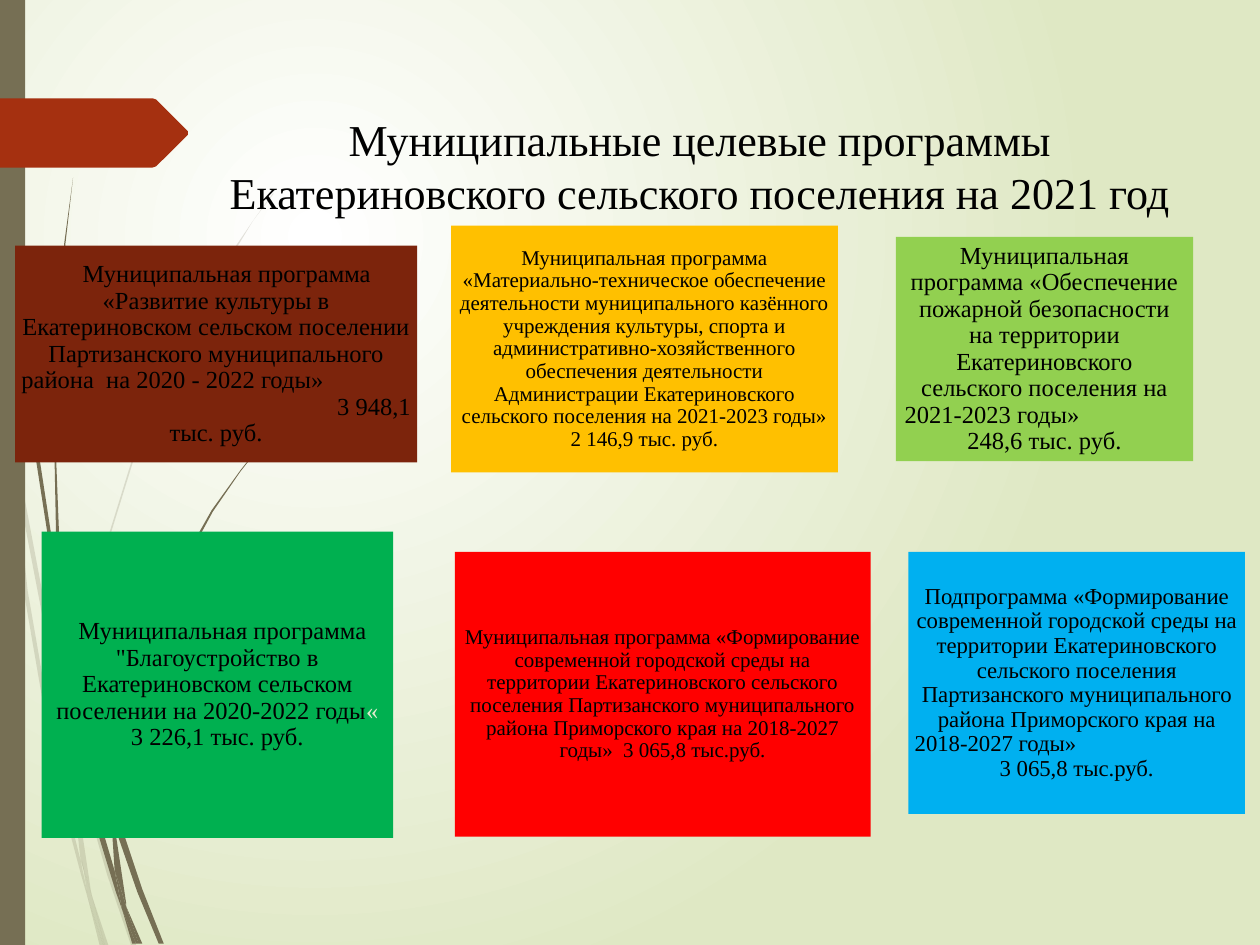
"""Builds the slide on municipal target programmes for 2021."""
from lxml import etree
from pptx import Presentation
from pptx.dml.color import RGBColor
from pptx.enum.shapes import MSO_SHAPE
from pptx.enum.text import MSO_ANCHOR, PP_ALIGN
from pptx.oxml.ns import qn
from pptx.util import Inches, Pt

RECTANGLE = MSO_SHAPE.RECTANGLE
TOP, MIDDLE = MSO_ANCHOR.TOP, MSO_ANCHOR.MIDDLE
LEFT, CENTER, RIGHT = PP_ALIGN.LEFT, PP_ALIGN.CENTER, PP_ALIGN.RIGHT

FONT = "Times New Roman"
BLACK = RGBColor(0x00, 0x00, 0x00)
WHITE = RGBColor(0xFF, 0xFF, 0xFF)
PALE_GREEN = RGBColor(0xDF, 0xE8, 0xC4)
PALE_QUOTE = RGBColor(0xE3, 0xEA, 0xCF)
OLIVE = RGBColor(0x76, 0x6F, 0x54)
RUST = RGBColor(0xA5, 0x30, 0x10)
BROWN = RGBColor(0x7C, 0x24, 0x0C)
AMBER = RGBColor(0xFF, 0xC0, 0x00)
LIME = RGBColor(0x92, 0xD0, 0x50)
GREEN = RGBColor(0x00, 0xB0, 0x50)
RED = RGBColor(0xFF, 0x00, 0x00)
BLUE = RGBColor(0x00, 0xB0, 0xF0)

TITLE = "Муниципальные целевые программы Екатериновского сельского поселения на 2021 год"

PALE_STEMS = [
    [(0.08, 3.5), (0.06, 3.22), (0, 2.82), (0, 2.99), (0.07, 3.44)],
    [(0.4, 5.22), (0.59, 5.99), (0.59, 5.86), (0.43, 5.2), (0.1, 3.45), (0.12, 3.76)],
    [(0.64, 6.07), (0.61, 5.96), (0.61, 6.1), (0.85, 6.94), (1.04, 7.5), (1.08, 7.5),
     (0.88, 6.92)],
    [(0.83, 7.5), (0.86, 7.5), (0.73, 7.11)],
    [(0.64, 6.83), (0.48, 6.19), (0.22, 4.69), (0.12, 3.76), (0.08, 3.5), (0.19, 4.7),
     (0.45, 6.21), (0.64, 6.93), (0.7, 7.14), (0.69, 7.07)],
    [(0.58, 5.99), (0.6, 6.46), (0.64, 6.83), (0.67, 6.92), (0.73, 7.11), (0.72, 7.06),
     (0.63, 6.46), (0.61, 6.1), (0.61, 6.08)],
    [(0.61, 5.84), (0.76, 4.62), (1.11, 3.49), (1.59, 2.45), (1.87, 1.98), (2.01, 1.75),
     (2.17, 1.54), (2.17, 1.53), (2.01, 1.75), (1.86, 1.97), (1.58, 2.44), (1.1, 3.48),
     (0.75, 4.61), (0.59, 5.84), (0.59, 5.86), (0.61, 5.96)],
    [(0.7, 7.14), (0.79, 7.5), (0.82, 7.5)],
    [(0.67, 6.92), (0.65, 6.83), (0.69, 7.07), (0.7, 7.14), (0.82, 7.5), (0.83, 7.5),
     (0.73, 7.11)],
]
DARK_STEMS = [
    [(0.05, 1.1), (0.14, 2.33), (0.27, 3.55), (0.46, 4.77), (0.47, 4.81), (0.45, 4.57),
     (0.45, 4.53), (0.3, 3.55), (0.15, 2.32), (0.06, 1.09), (0.04, 0.48), (0.03, 0),
     (0.02, 0), (0.03, 0.48)],
    [(0.94, 6.49), (0.91, 6.41), (0.91, 6.56), (1.09, 7.08), (1.26, 7.49), (1.3, 7.49),
     (1.13, 7.06)],
    [(0.91, 6.91), (0.81, 6.57), (0.6, 5.56), (0.53, 5.05), (0.47, 4.77), (0.56, 5.57),
     (0.77, 6.59), (0.92, 7.08), (0.97, 7.22), (0.96, 7.17)],
    [(0.5, 4.72), (0.48, 4.53), (0.44, 3.49), (0.48, 2.45), (0.52, 1.93), (0.58, 1.41),
     (0.51, 1.93), (0.47, 2.45), (0.43, 3.49), (0.45, 4.49), (0.49, 4.72)],
    [(1.1, 7.49), (1.13, 7.49), (1, 7.19)],
    [(0.91, 6.33), (1.03, 5.52), (1.31, 4.76), (1.69, 4.06), (1.91, 3.74), (2.03, 3.59),
     (2.16, 3.44), (2.15, 3.44), (2.03, 3.58), (1.91, 3.73), (1.68, 4.05), (1.29, 4.74),
     (1.01, 5.51), (0.88, 6.31), (0.91, 6.41)],
    [(0.97, 7.22), (1.05, 7.49), (1.08, 7.49)],
    [(0.88, 6.45), (0.91, 6.91), (0.96, 7.06), (1, 7.19), (1, 7.16), (0.91, 6.56),
     (0.9, 6.51)],
    [(0.96, 7.06), (0.91, 6.91), (0.96, 7.17), (0.97, 7.22), (1.08, 7.49), (1.1, 7.49),
     (1, 7.19)],
]
ARROW = [(0, 0.78), (1.21, 0.78), (1.24, 0.79), (1.49, 1.04), (1.49, 1.07),
         (1.24, 1.32), (1.21, 1.33), (0, 1.33)]

PROGRAMS = [
    ((0.12, 1.95, 3.19, 1.72), BROWN, 14, 0.05, 0.17, [
        (CENTER, [("Муниципальная программа «Развитие культуры в Екатериновском сельском "
                   "поселении Партизанского муниципального", BLACK)]),
        (LEFT, [("района  на 2020 - 2022 годы»", BLACK)]),
        (RIGHT, [("3 948,1", BLACK)]),
        (CENTER, [("тыс. руб.", BLACK)])]),
    ((3.58, 1.79, 3.07, 1.96), AMBER, 12, 0.05, 0, [
        (CENTER, [("Муниципальная программа «Материально-техническое обеспечение деятельности "
                   "муниципального казённого учреждения культуры, спорта и "
                   "административно-хозяйственного обеспечения деятельности Администрации "
                   "Екатериновского сельского поселения на 2021-2023 годы» "
                   "2 146,9 тыс. руб.", BLACK)])]),
    ((7.11, 1.88, 2.36, 1.78), LIME, 14, 0.07, 0, [
        (CENTER, [("Муниципальная программа «Обеспечение пожарной безопасности на территории "
                   "Екатериновского сельского поселения на", BLACK)]),
        (LEFT, [("2021-2023 годы»", BLACK)]),
        (CENTER, [("248,6 тыс. руб.", BLACK)])]),
    ((0.33, 4.22, 2.79, 2.43), GREEN, 14, 0.05, 0.08, [
        (CENTER, [("Муниципальная программа \"Благоустройство в Екатериновском сельском "
                   "поселении на 2020-2022 годы", BLACK), ("«", PALE_QUOTE)]),
        (CENTER, [("3 226,1 тыс. руб.", BLACK)])]),
    ((3.61, 4.38, 3.3, 2.26), RED, 12, 0.05, 0, [
        (CENTER, [("Муниципальная программа «Формирование современной городской среды на "
                   "территории Екатериновского сельского поселения Партизанского "
                   "муниципального района Приморского края на 2018-2027 годы»  "
                   "3 065,8 тыс.руб.", BLACK)])]),
    ((7.21, 4.38, 2.67, 2.08), BLUE, 13, 0.05, 0, [
        (CENTER, [("Подпрограмма «Формирование современной городской среды на территории "
                   "Екатериновского сельского поселения Партизанского муниципального района "
                   "Приморского края на", BLACK)]),
        (LEFT, [("2018-2027 годы»", BLACK)]),
        (CENTER, [("3 065,8 тыс.руб.", BLACK)])]),
]


def paint(shape, color, alpha=None):
    """Give a shape a flat fill without line or shadow."""
    shape.shadow.inherit = False
    shape.fill.solid()
    shape.fill.fore_color.rgb = color
    shape.line.fill.background()
    if alpha is not None:
        rgb = shape.element.spPr.find(qn("a:solidFill"))[0]
        etree.SubElement(rgb, qn("a:alpha")).set("val", str(alpha * 1000))


def add_block(slide, box, color):
    """Add a plain rectangle."""
    block = slide.shapes.add_shape(RECTANGLE, *map(Inches, box))
    paint(block, color)
    return block


def add_outline(slide, points, color, alpha=None):
    """Add a closed outline through points given in inches."""
    start, *corners = [(Inches(x), Inches(y)) for x, y in points]
    builder = slide.shapes.build_freeform(*start)
    builder.add_line_segments(corners, close=True)
    paint(builder.convert_to_shape(), color, alpha)


def write_text(frame, paragraphs, *, size, anchor=MIDDLE, margin=0.05, spacing=0.9, indent=0):
    """Write aligned paragraphs of coloured runs into a text frame."""
    frame.word_wrap = True
    frame.vertical_anchor = anchor
    frame.margin_left = frame.margin_right = Inches(margin)
    frame.margin_top = frame.margin_bottom = Inches(0.05)
    for index, (align, runs) in enumerate(paragraphs):
        paragraph = frame.add_paragraph() if index else frame.paragraphs[0]
        paragraph.alignment = align
        paragraph.line_spacing = spacing
        if indent and index == 0:
            paragraph._p.get_or_add_pPr().set("indent", str(Inches(indent)))
        for text, color in runs:
            run = paragraph.add_run()
            run.text = text
            run.font.name = FONT
            run.font.size = Pt(size)
            run.font.color.rgb = color


def set_background(slide):
    """Lay a circular gradient that is brightest in the upper left quarter."""
    fill = slide.background.fill
    fill.gradient()
    for stop, color in zip(fill.gradient_stops, (WHITE, PALE_GREEN)):
        stop.color.rgb = color
    gradient = slide.element.find(".//" + qn("a:gradFill"))
    linear = gradient.find(qn("a:lin"))
    circle = etree.Element(qn("a:path"), {"path": "circle"})
    etree.SubElement(circle, qn("a:fillToRect"),
                     {"l": "50000", "t": "50000", "r": "100000", "b": "100000"})
    gradient.replace(linear, circle)


def main():
    """Build and save the slide."""
    deck = Presentation()
    deck.slide_width, deck.slide_height = Inches(10), Inches(7.5)
    slide = deck.slides.add_slide(deck.slide_layouts[6])
    set_background(slide)
    for stem in PALE_STEMS:
        add_outline(slide, stem, OLIVE, alpha=20)
    for stem in DARK_STEMS:
        add_outline(slide, stem, OLIVE)
    add_block(slide, (0, 0, 0.2, 7.5), OLIVE)
    add_outline(slide, ARROW, RUST)
    title = slide.shapes.add_textbox(*map(Inches, (1.61, 0.84, 7.89, 1)))
    write_text(title.text_frame, [(CENTER, [(TITLE, BLACK)])],
               size=25.2, anchor=TOP, margin=0.1, spacing=1.0)
    for box, color, size, margin, indent, paragraphs in PROGRAMS:
        block = add_block(slide, box, color)
        write_text(block.text_frame, paragraphs, size=size, margin=margin, indent=indent)
    deck.save("out.pptx")


if __name__ == "__main__":
    main()
